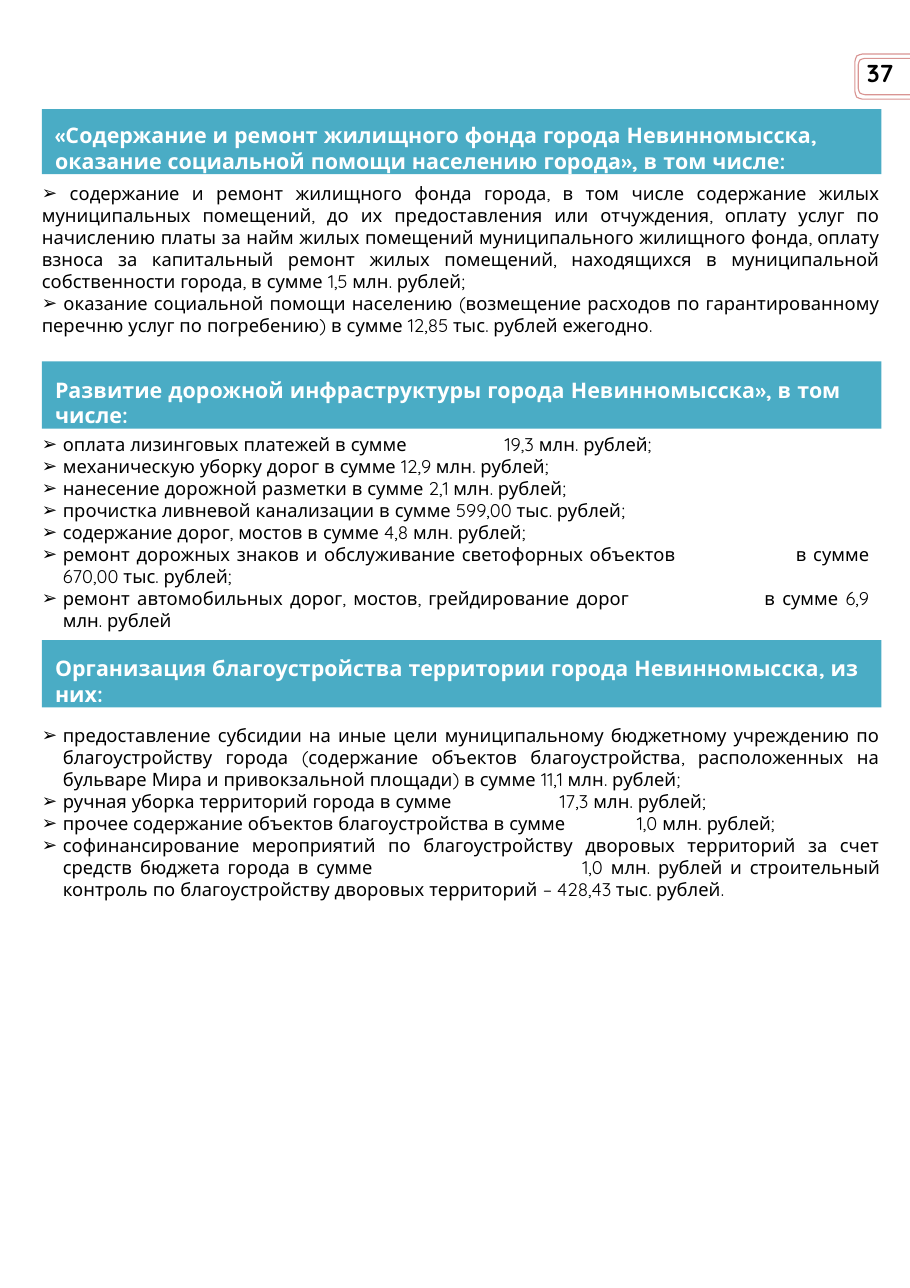
from lxml import etree
from pptx import Presentation
from pptx.dml.color import RGBColor
from pptx.enum import shapes, text
from pptx.oxml import ns
from pptx.util import Inches, Pt

TEAL = RGBColor(0x4A, 0xAC, 0xC5)
ROSE = RGBColor(0xD9, 0x95, 0x93)
WHITE = RGBColor(0xFF, 0xFF, 0xFF)
BLACK = RGBColor(0, 0, 0)
FONT = "Quicksand"
PAGE_WIDTH, PAGE_HEIGHT = 8.26, 11.69
LEFT, WIDTH = 0.38, 7.62

HOUSING = [
    (" содержание и ремонт жилищного фонда города, в том числе содержание жилых муниципальных "
     "помещений, до их предоставления или отчуждения, оплату услуг по начислению платы за найм "
     "жилых помещений муниципального жилищного фонда, оплату взноса за капитальный ремонт жилых "
     "помещений, находящихся в муниципальной собственности города, в сумме 1,5 млн. рублей;", None),
    (" оказание социальной помощи населению (возмещение расходов по гарантированному перечню услуг "
     "по погребению) в сумме 12,85 тыс. рублей ежегодно.", None),
]
ROADS = [
    ("оплата лизинговых платежей в сумме\t19,3 млн. рублей;", 4.2),
    ("механическую уборку дорог в сумме 12,9 млн. рублей;", None),
    ("нанесение дорожной разметки в сумме 2,1 млн. рублей;", None),
    ("прочистка ливневой канализации в сумме 599,00 тыс. рублей;", None),
    ("содержание дорог, мостов в сумме 4,8 млн. рублей;", None),
    ("ремонт дорожных знаков и обслуживание светофорных объектов\tв сумме 670,00 тыс. рублей;", 6.75),
    ("ремонт автомобильных дорог, мостов, грейдирование дорог\tв сумме 6,9 млн. рублей", 6.45),
]
LANDSCAPING = [
    ("предоставление субсидии на иные цели муниципальному бюджетному учреждению по благоустройству "
     "города (содержание объектов благоустройства, расположенных на бульваре Мира и привокзальной "
     "площади) в сумме 11,1 млн. рублей;", None),
    ("ручная уборка территорий города в сумме\t17,3 млн. рублей;", 4.7),
    ("прочее содержание объектов благоустройства в сумме\t1,0 млн. рублей;", 5.4),
    ("софинансирование мероприятий по благоустройству дворовых территорий за счет средств бюджета "
     "города в сумме\t1,0 млн. рублей и строительный контроль по благоустройству дворовых "
     "территорий – 428,43 тыс. рублей.", 4.8),
]


def place(shape, left, top, width, height):
    shape.left, shape.top = Inches(left), Inches(top)
    shape.width, shape.height = Inches(width), Inches(height)


def prepare_frame(shape, inset_left, inset_top):
    frame = shape.text_frame
    frame.word_wrap = True
    frame.auto_size = text.MSO_AUTO_SIZE.NONE
    frame.vertical_anchor = text.MSO_ANCHOR.TOP
    frame.margin_left, frame.margin_top = Inches(inset_left), Inches(inset_top)
    frame.margin_right = frame.margin_bottom = 0
    return frame


def write(para, words, size, color, bold):
    para.space_before = Pt(0)
    span = para.add_run()
    span.text = words
    span.font.name, span.font.size = FONT, Pt(size)
    span.font.bold, span.font.color.rgb = bold, color


def add_bullet(para, indent, tab):
    properties = para._p.get_or_add_pPr()
    properties.set("marL", str(Inches(indent)))
    properties.set("indent", str(-Inches(indent)))
    etree.SubElement(properties, ns.qn("a:buChar"), char="➢")
    if tab:
        stops = etree.SubElement(properties, ns.qn("a:tabLst"))
        etree.SubElement(stops, ns.qn("a:tab"), pos=str(Inches(tab)), algn="l")


def draw_band(shape, top, height, inset_top, heading):
    place(shape, LEFT, top, WIDTH, height)
    shape.fill.solid()
    shape.fill.fore_color.rgb = TEAL
    shape.line.fill.background()
    para = prepare_frame(shape, 0.12, inset_top).paragraphs[0]
    para.alignment = text.PP_ALIGN.LEFT
    write(para, heading, 14, WHITE, True)


def draw_list(body, top, width, height, inset_top, indent, items):
    place(body, LEFT, top, width, height)
    frame = prepare_frame(body, 0, inset_top)
    for number, (words, tab) in enumerate(items):
        para = frame.add_paragraph() if number else frame.paragraphs[0]
        add_bullet(para, indent, tab)
        para.alignment = text.PP_ALIGN.JUSTIFY
        write(para, words, 12, BLACK, False)


def draw_badge_outline(page, left, top, bottom, radius):
    corner = [(1, 0), (0.6, 0.1), (0.25, 0.25), (0.1, 0.6), (0, 1)]
    upper = [(left + x * radius, top + y * radius) for x, y in corner]
    lower = [(left + x * radius, bottom - y * radius) for x, y in reversed(corner)]
    points = [(Inches(x), Inches(y)) for x, y in upper + lower + [(PAGE_WIDTH, bottom)]]
    builder = page.shapes.build_freeform(Inches(PAGE_WIDTH), Inches(top))
    builder.add_line_segments(points, close=False)
    outline = builder.convert_to_shape()
    outline.shadow.inherit = False
    outline.fill.background()
    outline.line.color.rgb = ROSE
    outline.line.width = Pt(0.75)


def draw_badge(page, left, top, width, height):
    draw_badge_outline(page, left, top, top + height, 0.07)
    draw_badge_outline(page, left + 0.03, top + 0.04, top + height - 0.04, 0.06)
    box = page.shapes.add_textbox(0, 0, 0, 0)
    place(box, left + 0.1, top + 0.03, width - 0.1, 0.28)
    frame = prepare_frame(box, 0.01, 0.01)
    write(frame.paragraphs[0], "37", 16, BLACK, True)


def add_band_shape(page):
    band = page.shapes.add_shape(shapes.MSO_SHAPE.RECTANGLE, 0, 0, 0, 0)
    band.shadow.inherit = False
    return band


def build_budget_page(deck):
    page = deck.slides.add_slide(deck.slide_layouts[4])
    title, housing, roads, landscaping, spare = page.placeholders
    spare.element.getparent().remove(spare.element)
    draw_badge(page, 7.76, 0.49, 0.5, 0.41)
    draw_band(title, 0.99, 0.59, 0.12,
              "«Содержание и ремонт жилищного фонда города Невинномысска, "
              "оказание социальной помощи населению города», в том числе:")
    draw_list(housing, 1.62, 7.61, 1.44, 0.03, 0, HOUSING)
    draw_band(add_band_shape(page), 3.28, 0.61, 0.14,
              "Развитие дорожной инфраструктуры города Невинномысска», в том числе:")
    draw_list(roads, 3.92, 7.51, 1.83, 0.01, 0.19, ROADS)
    draw_band(add_band_shape(page), 5.81, 0.61, 0.14,
              "Организация благоустройства территории города Невинномысска, из них:")
    draw_list(landscaping, 6.56, 7.61, 1.85, 0.01, 0.19, LANDSCAPING)


def main():
    deck = Presentation()
    deck.slide_width, deck.slide_height = Inches(PAGE_WIDTH), Inches(PAGE_HEIGHT)
    build_budget_page(deck)
    deck.save("out.pptx")


if __name__ == "__main__":
    main()
